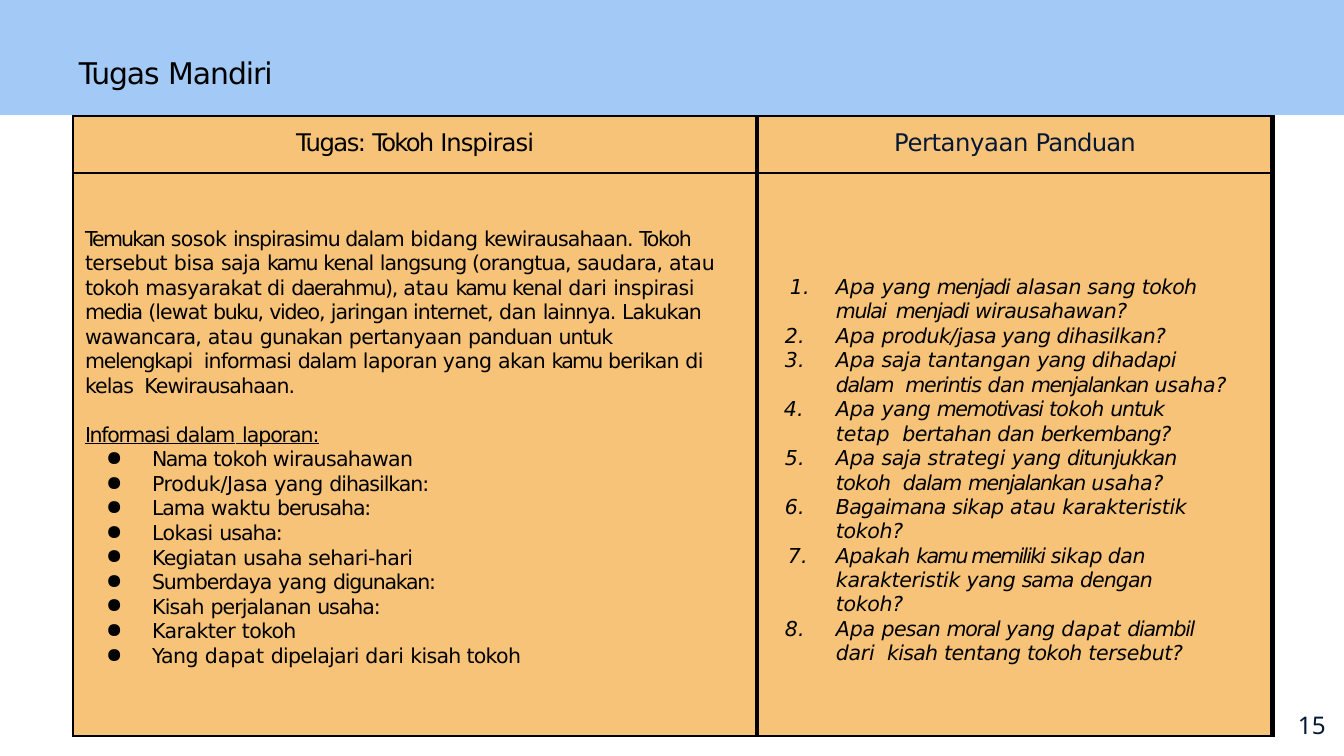
"""Build the "Tugas Mandiri" slide: a title band, a two-column task table and a page number."""
from lxml.etree import SubElement as Sub
from pptx import Presentation
from pptx.dml.color import RGBColor as RGB
from pptx.enum.shapes import MSO_SHAPE as Shape
from pptx.enum.text import PP_ALIGN as Align
from pptx.oxml.ns import qn
from pptx.util import Pt

PX = 914400 / 134.4
BLUE = RGB(0xA3, 0xCA, 0xF6)
GOLD = RGB(0xF7, 0xC3, 0x79)
BLACK = RGB(0, 0, 0)
NAVY = RGB(0x04, 0x18, 0x34)
SANS = "DejaVu Sans"
NOTO = "Noto Sans"
THIN, THICK = 0.75, 3

TITLE = [("Tugas ", -6), ("Mandiri", -5)]
HEADS = [
    ([("Tugas: ", -8), ("Tokoh ", -9), ("Inspirasi", -5)], BLACK),
    ([("Pertanyaan ", -2), ("Panduan", -4)], NAVY),
]
INTRO = [
    ("Temukan ", -10), ("sosok ", -3), ("inspirasimu dalam ", -6), ("bidang ", -3),
    ("kewirausahaan. ", -5), ("Tokoh ", -8), ("tersebut ", -3), ("bisa ", -2),
    ("saja ", -3), ("kamu ", -10), ("kenal ", -6), ("langsung (orangtua, ", -5),
    ("saudara, ", -3), ("atau ", -1), ("tokoh ", -4), ("masyarakat di ", -3),
    ("daerahmu), ", -8), ("atau ", -1), ("kamu ", -10), ("kenal ", -6),
    ("dari ", -2), ("inspirasi ", -3), ("media ", -8), ("(lewat ", -5),
    ("buku, ", -8), ("video, ", -7), ("jaringan internet, ", -5), ("dan ", -3),
    ("lainnya. ", -6), ("Lakukan ", -5), ("wawancara, ", -4), ("atau ", -1),
    ("gunakan ", -5), ("pertanyaan ", -3), ("panduan ", -5), ("untuk ", -6),
    ("melengkapi  ", -7), ("informasi ", -5), ("dalam ", -6), ("laporan yang ", -3),
    ("akan ", -4), ("kamu ", -10), ("berikan ", -5), ("di ", -3),
    ("kelas  Kewirausahaan.", -5),
]
LABEL = [("Informasi ", -7), ("dalam", -6), (" ", -11), ("laporan:", -6)]
POINTS = [
    [("Nama ", -8), ("tokoh wirausahawan", -4)],
    [("Produk/Jasa ", -2), ("yang ", -3), ("dihasilkan:", -6)],
    [("Lama ", -6), ("waktu ", -3), ("berusaha:", -6)],
    [("Lokasi ", -3), ("usaha:", -6)],
    [("Kegiatan ", -4), ("usaha sehari-hari", -3)],
    [("Sumberdaya ", -6), ("yang ", -3), ("digunakan:", -7)],
    [("Kisah ", -4), ("perjalanan ", -5), ("usaha:", -6)],
    [("Karakter ", -3), ("tokoh", -4)],
    [("Yang ", -3), ("dapat ", 0), ("dipelajari ", -4), ("dari ", -2), ("kisah tokoh", -4)],
]
# Each question: hanging indent, right indent, line spacing, runs
ASKS = [
    (46, 25, 1.02, [("Apa ", -1), ("yang ", -3), ("menjadi ", -8), ("alasan sang ", -2),
                    ("tokoh", -4), (" mulai  menjadi ", -8), ("wirausahawan?", -3)]),
    (51, 25, 1, [("Apa ", -1), ("produk/jasa yang dihasilkan?", -3)]),
    (51, 0, 1.02, [("Apa ", -1), ("saja ", -3), ("tantangan ", -2), ("yang dihadapi ", -3),
                   ("dalam  ", -7), ("merintis ", -6), ("dan ", -3), ("menjalankan ", -8),
                   ("usaha?", -1)]),
    (52, 25, 1.02, [("Apa ", -1), ("yang ", -3), ("memotivasi ", -8), ("tokoh ", -4),
                    ("untuk ", -6), ("tetap  ", -1), ("bertahan dan ", -3),
                    ("berkembang?", -6)]),
    (51, 25, 1.02, [("Apa ", -1), ("saja ", -3), ("strategi ", -1), ("yang ", -3),
                    ("ditunjukkan ", -6), ("tokoh  ", -4), ("dalam ", -6),
                    ("menjalankan ", -8), ("usaha?", -1)]),
    (51, 25, 1, [("Bagaimana ", -4), ("sikap ", -3), ("atau ", -1),
                 ("karakteristik tokoh?", -2)]),
    (48, 25, 1.02, [("Apakah ", -3), ("kamu memiliki ", -10), ("sikap dan ", -3),
                    ("karakteristik ", -2), ("yang ", -3), ("sama ", -6), ("dengan ", -5),
                    ("tokoh?", -2)]),
    (51, 25, 1.02, [("Apa ", -1), ("pesan ", -4), ("moral ", -7), ("yang ", -3),
                    ("dapat ", 0), ("diambil ", -7), ("dari  ", -2), ("kisah ", -4),
                    ("tentang ", -3), ("tokoh ", -4), ("tersebut?", -2)]),
]


def px(num):
    """Turn pixels into EMU."""
    return round(num * PX)


def write(para, runs, size=11, face=SANS, ink=BLACK, **style):
    """Add runs, each with its letter spacing in tenths of a point."""
    for text, gap in runs:
        run = para.add_run()
        run.text = text
        font = run.font
        font.size, font.name, font.color.rgb = Pt(size), face, ink
        font.italic = style.get("italic")
        font.underline = style.get("under")
        run._r.get_or_add_rPr().set("spc", str(gap * 10))


def indent(para, left, hang=0, right=0):
    """Set the paragraph's side indents."""
    prop = para._p.get_or_add_pPr()
    for key, num in (("marL", left), ("marR", right), ("indent", -hang)):
        prop.set(key, str(px(num)))


def mark(para, tag, **attrs):
    """Give the paragraph a bullet or a number."""
    Sub(para._p.get_or_add_pPr(), qn(tag), attrs)


def pad(box, left=0, top=0, right=0):
    """Set the inner margins of a cell or frame."""
    box.margin_left, box.margin_top = px(left), px(top)
    box.margin_right, box.margin_bottom = px(right), 0


def edge(cell, left):
    """Draw the four borders of a cell."""
    prop = cell._tc.get_or_add_tcPr()
    for side, wide in zip("LRTB", (left, THICK, THIN, THIN)):
        line = Sub(prop, qn("a:ln" + side), w=str(Pt(wide)))
        Sub(Sub(line, qn("a:solidFill")), qn("a:srgbClr"), val=str(BLACK))


def band(slide):
    """Draw the strip behind the title."""
    strip = slide.shapes.add_shape(Shape.RECTANGLE, 0, 0, px(1344), px(115))
    strip.shadow.inherit = False
    strip.fill.solid()
    strip.fill.fore_color.rgb = BLUE
    strip.line.fill.background()


def label(slide, place, left, top, runs, **style):
    """Add a one-line text box."""
    frame = slide.shapes.add_textbox(*map(px, place)).text_frame
    frame.word_wrap = True
    pad(frame, left, top)
    write(frame.paragraphs[0], runs, **style)


def grid(slide):
    """Add the empty table with its fills and borders."""
    table = slide.shapes.add_table(2, 2, px(73), px(116), px(1200), px(620)).table
    table.first_row = table.horz_banding = False
    for col, wide in zip(table.columns, (684, 516)):
        col.width = px(wide)
    for row, high in zip(table.rows, (57, 563)):
        row.height = px(high)
        for cell, left in zip(row.cells, (THIN, THICK)):
            edge(cell, left)
            cell.fill.solid()
            cell.fill.fore_color.rgb = GOLD
    return table


def task(cell):
    """Fill the cell that describes the task."""
    pad(cell, top=54, right=35)
    frame = cell.text_frame
    para = frame.paragraphs[0]
    para.line_spacing = 1.02
    indent(para, 12)
    write(para, INTRO)
    para = frame.add_paragraph()
    para.space_before = Pt(13.5)
    indent(para, 12)
    write(para, LABEL, under=True)
    for runs in POINTS:
        para = frame.add_paragraph()
        para.space_before = Pt(0.3)
        indent(para, 79, 46)
        mark(para, "a:buChar", char="●")
        write(para, runs)


def guide(cell):
    """Fill the cell that lists the guiding questions."""
    pad(cell, top=102, right=35)
    frame = cell.text_frame
    for num, (hang, right, pitch, runs) in enumerate(ASKS):
        para = frame.add_paragraph() if num else frame.paragraphs[0]
        para.line_spacing = pitch
        if pitch == 1:
            para.space_before = Pt(0.3)
        indent(para, 79, hang, right)
        mark(para, "a:buAutoNum", type="arabicPeriod")
        write(para, runs, italic=True)


def main():
    """Build and save the slide."""
    deck = Presentation()
    deck.slide_width, deck.slide_height = px(1344), px(756)
    slide = deck.slides.add_slide(deck.slide_layouts[6])
    band(slide)
    table = grid(slide)
    for cell, (runs, ink) in zip(table.rows[0].cells, HEADS):
        pad(cell, top=13)
        para = cell.text_frame.paragraphs[0]
        para.alignment = Align.CENTER
        write(para, runs, 13, ink=ink)
    task(table.cell(1, 0))
    guide(table.cell(1, 1))
    label(slide, (1293, 706, 39, 36), 5, 4, [("15", 0)], size=13, face=NOTO, ink=NAVY)
    label(slide, (78, 53, 200, 39), 1, 2, TITLE, size=16)
    deck.save("out.pptx")


if __name__ == "__main__":
    main()
